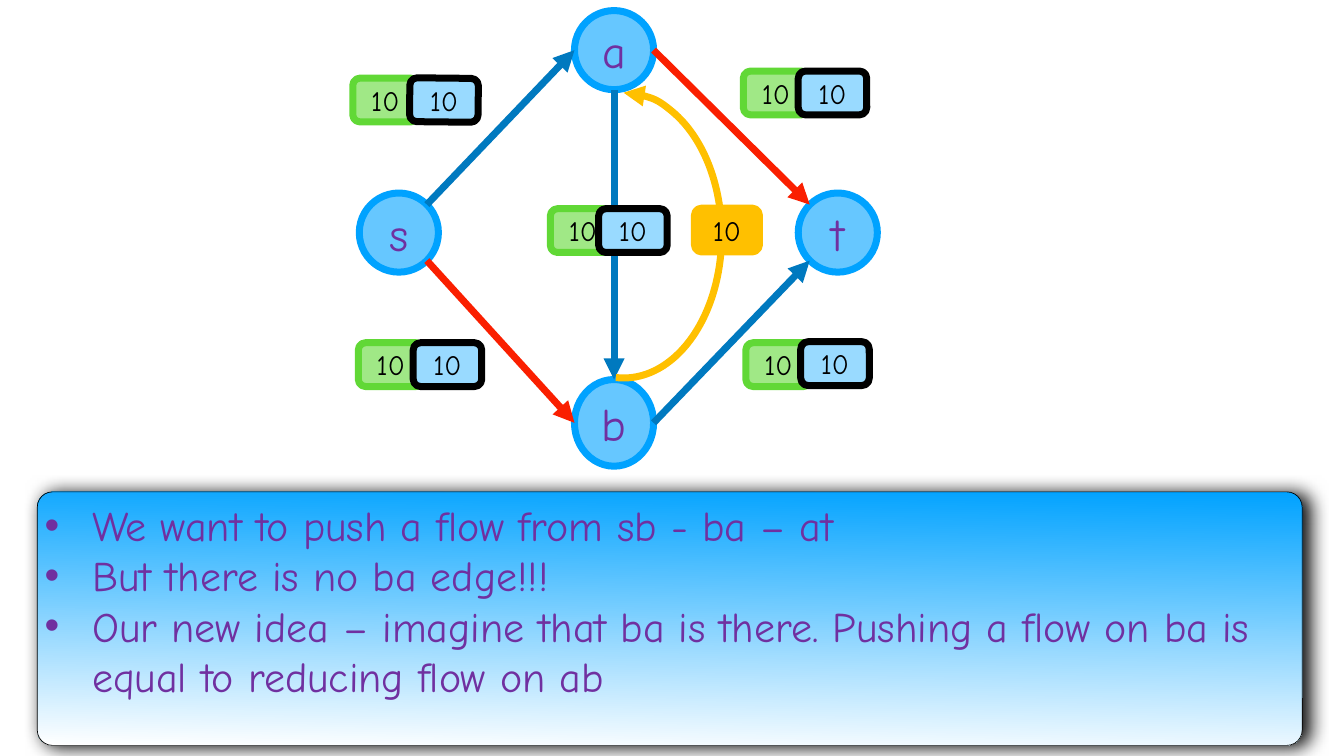
from lxml.etree import SubElement
from pptx import Presentation
from pptx.dml.color import RGBColor
from pptx.enum.shapes import MSO_CONNECTOR as Link, MSO_SHAPE as Form
from pptx.enum.text import MSO_ANCHOR as Anchor, PP_ALIGN as Align
from pptx.oxml.ns import qn
from pptx.util import Emu, Inches, Pt

FONT = "Comic Neue"
COLORS = {
    "node": "66C7FF", "node_line": "00A2FF", "text": "7030A0", "black": "000000",
    "flow": "99DAFF", "capacity": "A0E886", "capacity_line": "61D836",
    "edge": "0079BF", "new_path": "FA1F00", "reverse": "FFC000", "white": "FFFFFF",
}
HEAVY = 10  # outline and edge width in points
LABEL_HEIGHT = 0.87
CAPACITY_WIDTH, FLOW_WIDTH = 1.29, 1.36

# Node name: left, top, width, height
NODES = {
    "s": (7.13, 3.83, 1.57, 1.57),
    "a": (11.4, 0.21, 1.57, 1.57),
    "b": (11.4, 7.53, 1.57, 1.72),
    "t": (15.84, 3.83, 1.57, 1.57),
}
# Places on a node's rim, as shares of its width and height
RIM = {"left": (0, 0.5), "right": (1, 0.5), "top": (0.5, 0), "bottom": (0.5, 1),
       "upper right": (0.854, 0.146), "lower right": (0.854, 0.854),
       "upper left": (0.146, 0.146), "lower left": (0.146, 0.854)}
EDGES = [
    ("s", "upper right", "a", "left", "edge"),
    ("s", "lower right", "b", "left", "new_path"),
    ("b", "right", "t", "lower left", "edge"),
    ("a", "right", "t", "upper left", "new_path"),
    ("a", "bottom", "b", "top", "edge"),
]
# Capacity left and top, then flow left, top and rotation
LABELS = [
    (7.11, 6.8, 8.2, 6.8, 0),
    (14.75, 1.41, 15.84, 1.41, 0),
    (14.8, 6.8, 15.89, 6.78, 0),
    (7, 1.55, 8.13, 1.55, 0.6),
    (10.92, 4.14, 11.88, 4.14, 0),
]
NOTES = [
    "We want to push a flow from sb - ba – at",
    "But there is no ba edge!!!",
    "Our new idea – imagine that ba is there. Pushing a flow on ba is "
    "equal to reducing flow on ab",
]


def rgb(name):
    return RGBColor.from_string(COLORS[name])


def style_line(line, color, width=HEAVY):
    line.color.rgb = rgb(color)
    line.width = Pt(width)


def add_form(page, form, place, line, width=HEAVY):
    shape = page.shapes.add_shape(form, *(Inches(length) for length in place))
    shape.shadow.inherit = False
    style_line(shape.line, line, width)
    frame = shape.text_frame
    frame.word_wrap = True
    frame.margin_left = frame.margin_right = Inches(0.06)
    frame.margin_top = frame.margin_bottom = Inches(0.06)
    return shape


def style_text(para, size, color, align):
    para.alignment = align
    for span in para.runs:
        span.font.name = FONT
        span.font.size = Pt(size)
        span.font.color.rgb = rgb(color)


def add_caption(page, form, place, text, fill, line, size, color):
    shape = add_form(page, form, place, line)
    shape.fill.solid()
    shape.fill.fore_color.rgb = rgb(fill)
    shape.text_frame.text = text
    shape.text_frame.vertical_anchor = Anchor.MIDDLE
    style_text(shape.text_frame.paragraphs[0], size, color, Align.CENTER)
    return shape


def add_label(page, left, top, width, fill, line):
    place = (left, top, width, LABEL_HEIGHT)
    return add_caption(page, Form.ROUNDED_RECTANGLE, place, "10", fill, line, 40, "black")


def add_arrowhead(shape, end):
    SubElement(shape.line._get_or_add_ln(), qn(f"a:{end}"), type="triangle")


def rim_point(node, side):
    left, top, width, height = NODES[node]
    across, down = RIM[side]
    return Inches(left + across * width), Inches(top + down * height)


def add_edge(page, start, start_side, end, end_side, color):
    edge = page.shapes.add_connector(
        Link.STRAIGHT, *rim_point(start, start_side), *rim_point(end, end_side))
    style_line(edge.line, color)
    add_arrowhead(edge, "tailEnd")
    SubElement(edge._element.spPr, qn("a:effectLst"))


def add_reverse_edge(page):
    arc = add_form(page, Form.ARC, (10.43, 1.84, 3.89, 5.66), "reverse")
    arc.fill.background()
    arc.adjustments[0] = 162
    arc.adjustments[1] = 55.88
    add_arrowhead(arc, "headEnd")


def add_shadow(shape):
    effects = shape._element.spPr.find(qn("a:effectLst"))
    shadow = SubElement(effects, qn("a:outerShdw"), blurRad=str(Pt(28)),
                        dist=str(Pt(9)), dir="0", rotWithShape="0")
    color = SubElement(shadow, qn("a:srgbClr"), val=COLORS["black"])
    SubElement(color, qn("a:alpha"), val="97000")


def add_bullet(para, indent):
    props = para._p.get_or_add_pPr()
    props.set("marL", str(indent))
    props.set("indent", str(-indent))
    SubElement(props, qn("a:buFont"), typeface="Arial")
    SubElement(props, qn("a:buChar"), char="•")


def add_notes_panel(page):
    panel = add_form(page, Form.ROUNDED_RECTANGLE, (0.74, 9.76, 25.1, 5.03), "black", 1)
    panel.adjustments[0] = 0.06
    panel.fill.gradient()
    panel.fill.gradient_angle = 269
    for stop, color in zip(panel.fill.gradient_stops, ("node_line", "white")):
        stop.color.rgb = rgb(color)
    add_shadow(panel)
    frame = panel.text_frame
    frame.vertical_anchor = Anchor.TOP
    frame.text = "\n".join(NOTES)
    for para in frame.paragraphs:
        add_bullet(para, Inches(0.94))
        style_text(para, 60, "text", Align.LEFT)


def main():
    deck = Presentation()
    deck.slide_width, deck.slide_height = Inches(26.67), Inches(15)
    page = deck.slides.add_slide(deck.slide_layouts[6])

    # Flow network
    for name, place in NODES.items():
        add_caption(page, Form.OVAL, place, name, "node", "node_line", 66, "text")
    for edge in EDGES:
        add_edge(page, *edge)

    # Capacity and flow on each edge
    for left, top, flow_left, flow_top, turn in LABELS:
        add_label(page, left, top, CAPACITY_WIDTH, "capacity", "capacity_line")
        flow = add_label(page, flow_left, flow_top, FLOW_WIDTH, "flow", "black")
        flow.rotation = turn

    # Explanation
    add_notes_panel(page)

    # Imagined edge from b back to a
    add_reverse_edge(page)
    add_label(page, 13.78, 4.13, CAPACITY_WIDTH, "reverse", "reverse")

    deck.save("out.pptx")


if __name__ == "__main__":
    main()
